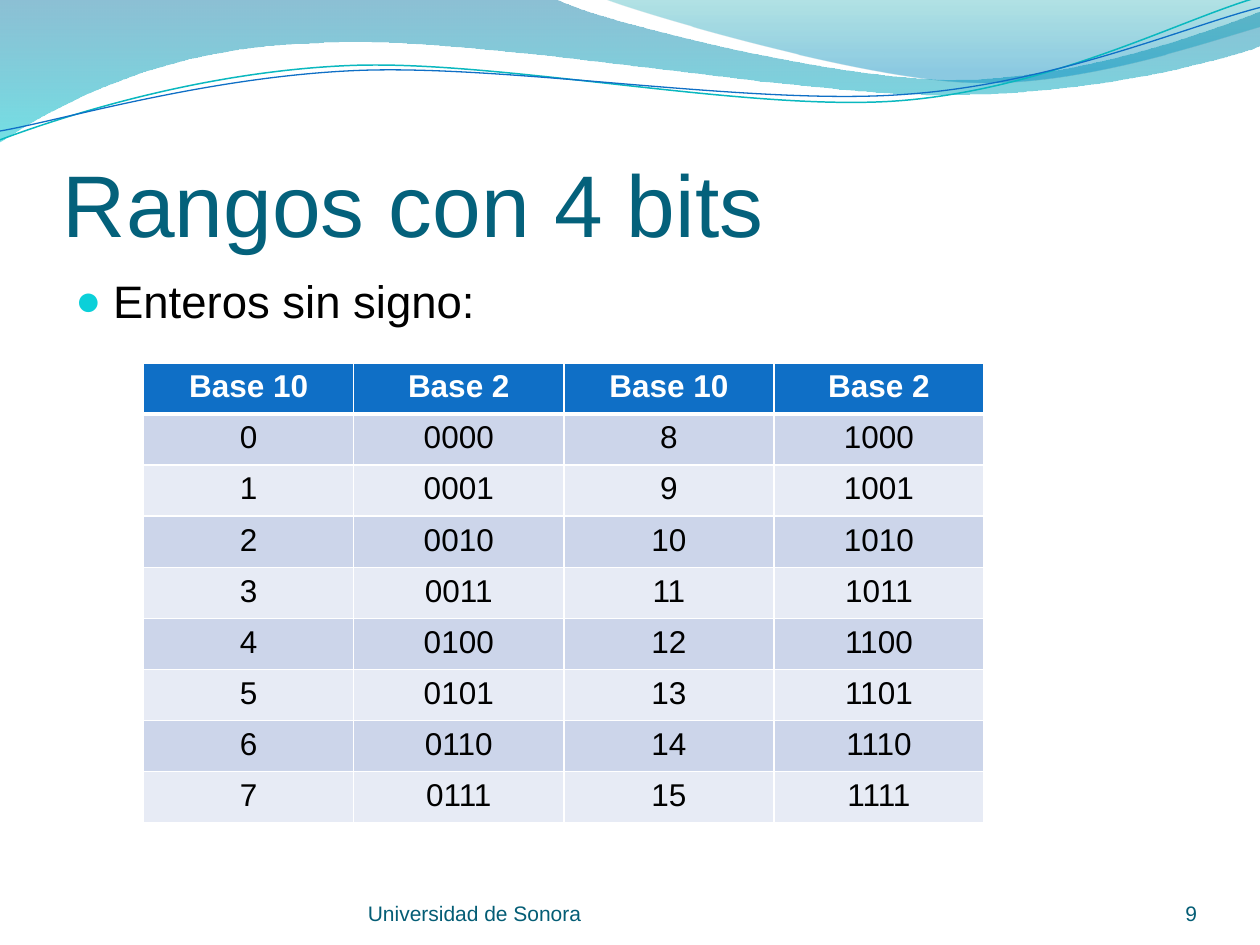
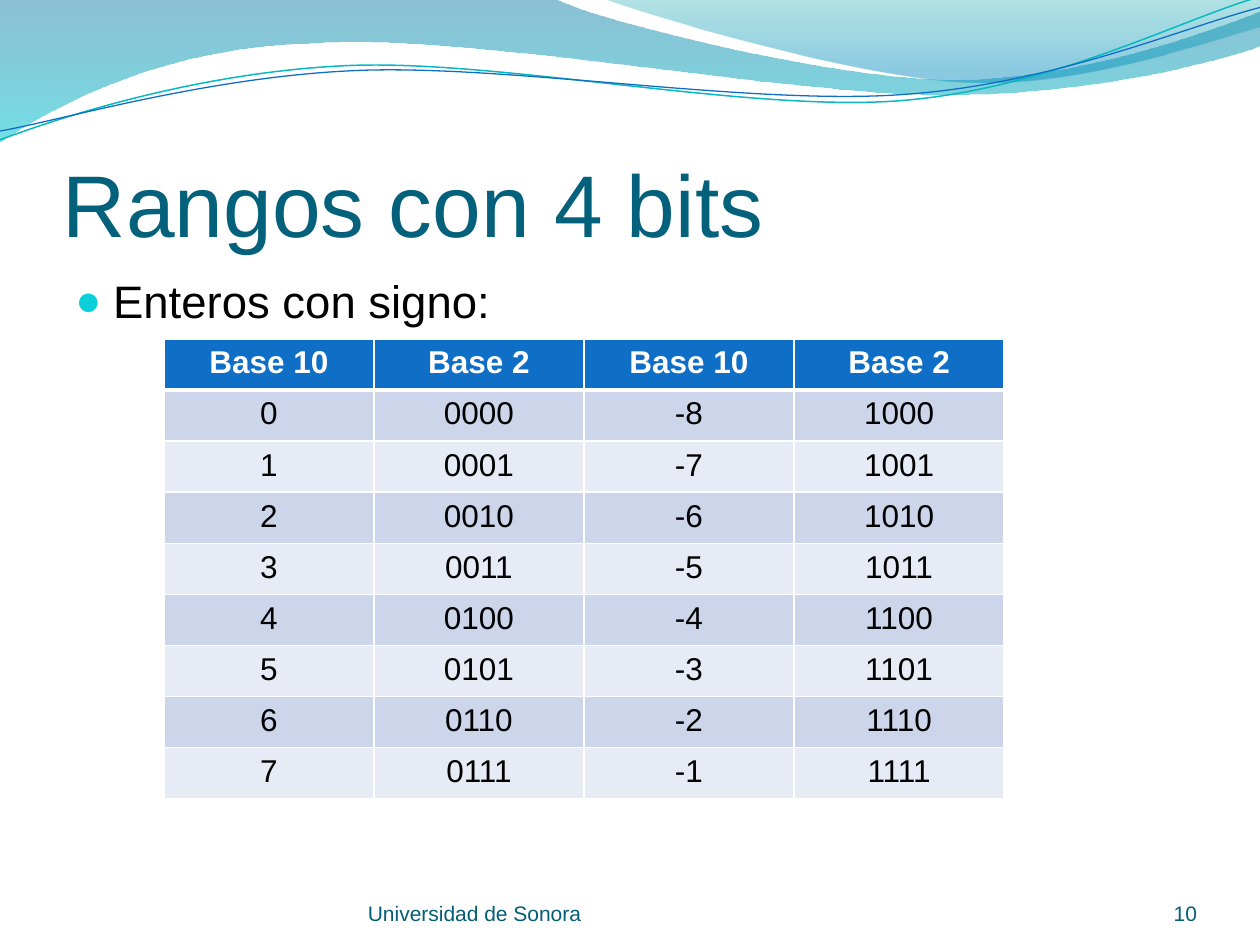
from math import cos, radians, sin

from lxml.etree import SubElement
from pptx import Presentation
from pptx.dml.color import RGBColor
from pptx.enum.text import MSO_ANCHOR, PP_ALIGN
from pptx.oxml import parse_xml
from pptx.oxml.ns import nsdecls, qn
from pptx.util import Inches, Pt

COLOURS = {
    "title": "04617B",
    "footer": "045D75",
    "text": "000000",
    "white": "FFFFFF",
    "bullet": "0BD0D9",
    "header": "0F6FC6",
    "odd_row": "CCD5EA",
    "even_row": "E7EBF5",
    "wide_top": "0074A1",
    "wide_bottom": "00C6CF",
    "right_top": "00A1A9",
    "right_bottom": "008BBF",
    "teal_line": "0AB8BF",
    "blue_line": "0F6FC6",
}
FONT = "Arial"
CURVE_TILT = -2.7

# Each outline is a list of steps: two numbers for a corner, six for a Bezier curve.
WIDE_WAVE = [
    (0, 0), (4.4, -0.01),
    (4.76, 0.17, 6.64, 0.63, 7.58, 0.63), (8.53, 0.63, 9.58, 0.26, 10, 0.09),
    (10.01, 0.36),
    (9.83, 0.44, 8.7, 0.76, 7.46, 0.75), (6.22, 0.75, 3.82, 0.28, 2.57, 0.34),
    (1.29, 0.36, 0.46, 0.83, -0.01, 1.13), (0, 0),
]
RIGHT_WAVE = [
    (4.79, -0.01),
    (5.09, 0.11, 6.82, 0.62, 7.69, 0.65), (8.56, 0.69, 9.61, 0.32, 10, 0.21),
    (10, 0), (4.79, -0.01),
]
TEAL_CURVE = [
    (0, 1.11),
    (0.48, 0.93, 1.58, 0.57, 2.77, 0.52), (3.95, 0.47, 5.93, 0.89, 7.13, 0.8),
    (8.33, 0.71, 9.38, 0.15, 9.98, -0.02),
]
BLUE_CURVE = [
    (0, 1.04),
    (0.47, 0.96, 1.64, 0.61, 2.83, 0.56), (4.03, 0.51, 5.97, 0.84, 7.17, 0.75),
    (8.36, 0.67, 9.41, 0.21, 10, 0.06),
]


def colour(name):
    return RGBColor.from_string(COLOURS[name])


def level(steps, centre):
    """Turn the steps about the centre so that tilting the shape puts them back."""
    angle = radians(-CURVE_TILT)
    turned = []
    for step in steps:
        numbers = []
        for x, y in zip(step[::2], step[1::2]):
            across, down = x - centre[0], y - centre[1]
            numbers.append(centre[0] + across * cos(angle) - down * sin(angle))
            numbers.append(centre[1] + across * sin(angle) + down * cos(angle))
        turned.append(tuple(numbers))
    return turned


class SlideWriter:
    def __init__(self, deck):
        self.deck = deck
        self.page = None

    def new_page(self):
        self.page = self.deck.slides.add_slide(self.deck.slide_layouts[6])

    def outline(self, steps, close):
        """Draw all points as corners, then join each group of three into a Bezier curve."""
        points = [(Inches(x), Inches(y))
                  for step in steps for x, y in zip(step[::2], step[1::2])]
        builder = self.page.shapes.build_freeform(*points[0])
        builder.add_line_segments(points[1:], close=close)
        shape = builder.convert_to_shape()
        shape.shadow.inherit = False
        segments = iter(list(shape.element.iter(qn("a:lnTo"))))
        for step in steps[1:]:
            segment = next(segments)
            if len(step) == 6:
                segment.addprevious(parse_xml(f'<a:cubicBezTo {nsdecls("a")}/>'))
                curve = segment.getprevious()
                for part in (segment, next(segments), next(segments)):
                    curve.append(part[0])
                    part.getparent().remove(part)
        return shape

    def wave(self, steps, stops):
        """Fill an outline from top to bottom; stops hold position, colour and opacity in percent."""
        shape = self.outline(steps, True)
        shape.line.fill.background()
        shape.fill.gradient()
        shape.fill.gradient_angle = 270
        for stop, (position, name, _) in zip(shape.fill.gradient_stops, stops):
            stop.position = position / 100
            stop.color.rgb = colour(name)
        for element, (_, _, opacity) in zip(shape.element.iter(qn("a:srgbClr")), stops):
            SubElement(element, qn("a:alpha"), val=str(opacity * 1000))

    def curve(self, steps, centre, name, width):
        shape = self.outline(level(steps, centre), False)
        shape.rotation = CURVE_TILT
        shape.fill.background()
        shape.line.color.rgb = colour(name)
        shape.line.width = Pt(width)

    def span(self, para, words, size, name, bold=False):
        span = para.add_run()
        span.text = words
        span.font.name = FONT
        span.font.size = Pt(size)
        span.font.bold = bold
        span.font.color.rgb = colour(name)

    def text(self, area, words, size, name, anchor=MSO_ANCHOR.BOTTOM,
             insets=(0, 0, 0, 0), align=PP_ALIGN.LEFT):
        box = self.page.shapes.add_textbox(*map(Inches, area))
        frame = box.text_frame
        frame.word_wrap = True
        frame.vertical_anchor = anchor
        (frame.margin_left, frame.margin_top,
         frame.margin_right, frame.margin_bottom) = map(Inches, insets)
        para = frame.paragraphs[0]
        para.alignment = align
        self.span(para, words, size, name)
        return para

    def bullet(self, words):
        para = self.text((0.5, 2.12, 9, 4.8), words, 26, "text",
                         MSO_ANCHOR.TOP, (0.1, 0.05, 0.1, 0.05))
        para.space_before = Pt(5.2)
        properties = para._p.get_or_add_pPr()
        properties.set("marL", str(Inches(0.3)))
        properties.set("indent", str(Inches(-0.3)))
        bullet_colour = SubElement(properties, qn("a:buClr"))
        SubElement(bullet_colour, qn("a:srgbClr"), val=COLOURS["bullet"])
        SubElement(properties, qn("a:buSzPct"), val="95000")
        SubElement(properties, qn("a:buFont"), typeface=FONT)
        SubElement(properties, qn("a:buChar"), char="●")

    def borders(self, cell, widths):
        """Draw white borders; widths are in points for left, right, top and bottom."""
        properties = cell._tc.get_or_add_tcPr()
        for index, (side, width) in enumerate(zip("LRTB", widths)):
            properties.insert(index, parse_xml(
                f'<a:ln{side} {nsdecls("a")} w="{Pt(width)}"><a:solidFill>'
                f'<a:srgbClr val="{COLOURS["white"]}"/></a:solidFill></a:ln{side}>'))

    def table(self, left, top, rows):
        area = map(Inches, (left, top, 6.67, 3.65))
        table = self.page.shapes.add_table(len(rows), len(rows[0]), *area).table
        for row_index, row in enumerate(rows):
            header = row_index == 0
            fill = "header" if header else "odd_row" if row_index % 2 else "even_row"
            widths = (1, 1, 3 if row_index == 1 else 1, 3 if header else 1)
            for column_index, words in enumerate(row):
                cell = table.cell(row_index, column_index)
                cell.fill.solid()
                cell.fill.fore_color.rgb = colour(fill)
                self.borders(cell, widths)
                para = cell.text_frame.paragraphs[0]
                para.alignment = PP_ALIGN.CENTER
                self.span(para, words, 18, "white" if header else "text", header)

    def frame(self, title, number):
        """Add what every slide shares: waves, title and footer."""
        self.wave(WIDE_WAVE, [(0, "wide_top", 45), (100, "wide_bottom", 55)])
        self.wave(RIGHT_WAVE, [(0, "right_top", 30), (80, "right_bottom", 45)])
        self.curve(TEAL_CURVE, (4.99, 0.58), "teal_line", 0.85)
        self.curve(BLUE_CURVE, (5, 0.59), "blue_line", 0.75)
        self.text((0.5, 0.77, 9, 1.25), title, 50, "title", insets=(0, 0.05, 0, 0))
        self.text((2.92, 6.95, 3.67, 0.4), "Universidad de Sonora", 12, "footer")
        self.text((8.67, 6.95, 0.83, 0.4), str(number), 12, "footer", align=PP_ALIGN.RIGHT)


def range_rows(upper_start):
    """List the 16 four-bit codes; upper_start is the value of 1000."""
    rows = [["Base 10", "Base 2"] * 2]
    for n in range(8):
        rows.append([str(n), f"{n:04b}", str(upper_start + n), f"{n + 8:04b}"])
    return rows


def main():
    deck = Presentation()
    deck.slide_width, deck.slide_height = Inches(10), Inches(7.5)
    writer = SlideWriter(deck)
    ranges = [
        (9, "Enteros sin signo:", 1.14, 2.88, 8),
        (10, "Enteros con signo:", 1.3, 2.69, -8),
    ]
    for number, heading, left, top, upper_start in ranges:
        writer.new_page()
        writer.frame("Rangos con 4 bits", number)
        writer.bullet(heading)
        writer.table(left, top, range_rows(upper_start))
    deck.save("out.pptx")


if __name__ == "__main__":
    main()
